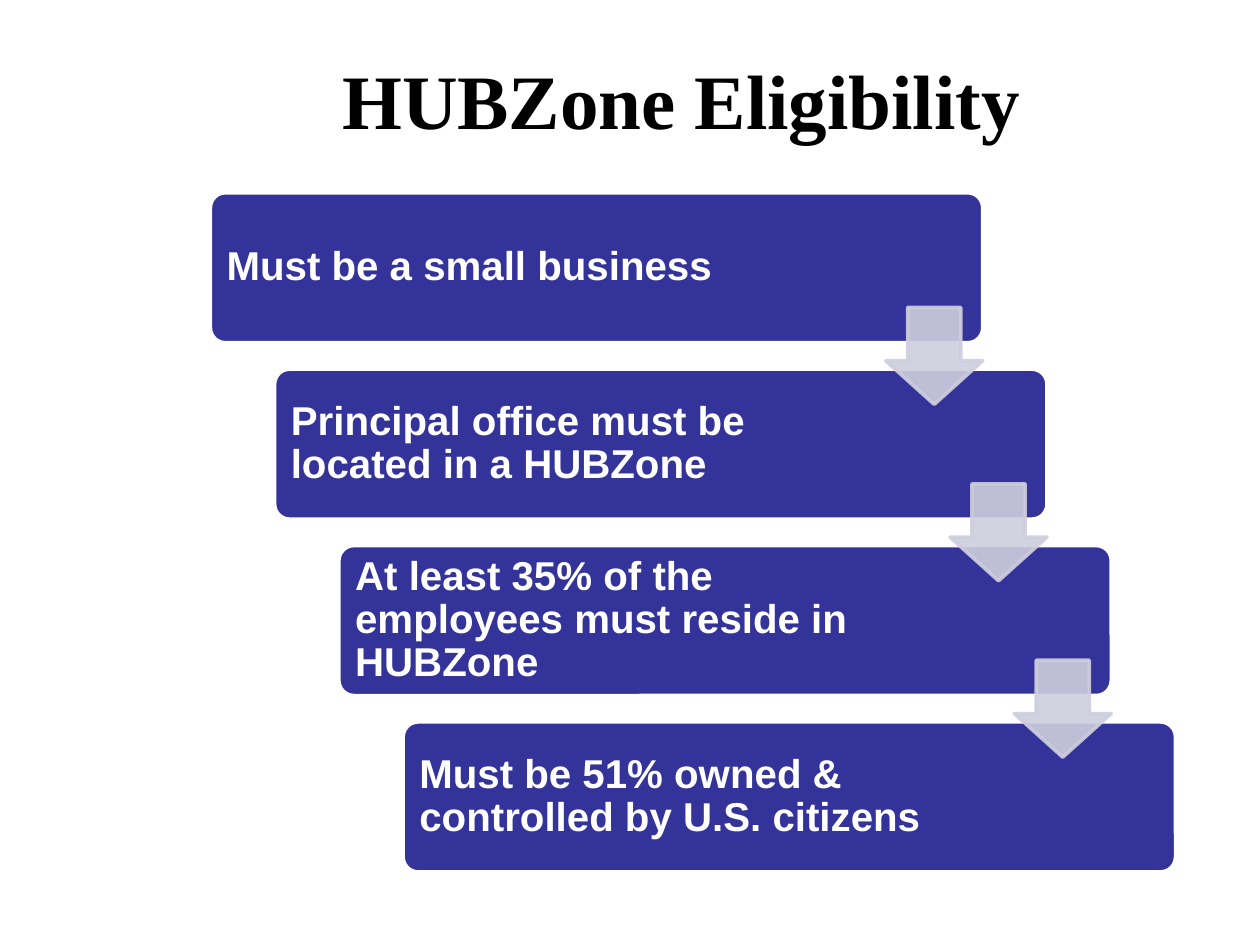
from dataclasses import dataclass

import pptx
import pptx.dml.color
import pptx.enum.shapes
import pptx.enum.text
import pptx.oxml.ns
import pptx.shapes.autoshape
import pptx.slide
import pptx.util
from lxml import etree

Inches = pptx.util.Inches
Pt = pptx.util.Pt
RGBColor = pptx.dml.color.RGBColor
MSO_SHAPE = pptx.enum.shapes.MSO_SHAPE
MSO_ANCHOR = pptx.enum.text.MSO_ANCHOR
PP_ALIGN = pptx.enum.text.PP_ALIGN

BLACK = RGBColor(0x00, 0x00, 0x00)
WHITE = RGBColor(0xFF, 0xFF, 0xFF)
INDIGO = RGBColor(0x33, 0x33, 0x99)
LAVENDER = RGBColor(0xCE, 0xCE, 0xDE)

STEP_X, STEP_Y = 0.51, 1.4
CARD_WIDTH, CARD_HEIGHT = 6.13, 1.19
LABEL_WIDTH, LABEL_INSET = 4.78, 0.03
ARROW_SIZE = 0.77
ARROW_OPACITY = 90


@dataclass(frozen=True)
class Requirement:
    text: str
    left: float
    top: float


REQUIREMENTS = [
    Requirement(text, 1.67 + index * STEP_X, 1.53 + index * STEP_Y)
    for index, text in enumerate([
        "Must be a small business",
        "Principal office must be located in a HUBZone",
        "At least 35% of the employees must reside in HUBZone",
        "Must be 51% owned & controlled by U.S. citizens",
    ])
]


def add_title(slide: pptx.slide.Slide, text: str) -> None:
    title = slide.shapes.title
    title.left, title.top = Inches(0.08), Inches(0.38)
    title.width, title.height = Inches(9.83), Inches(0.95)
    frame = title.text_frame
    frame.vertical_anchor = MSO_ANCHOR.MIDDLE
    frame.margin_left = Inches(0.93)  # shifts the centred title to the right
    frame.margin_right = Inches(0.1)
    frame.margin_top = frame.margin_bottom = Inches(0.05)
    paragraph = frame.paragraphs[0]
    paragraph.alignment = PP_ALIGN.CENTER
    paragraph.line_spacing = 0.8
    run = paragraph.add_run()
    run.text = text
    run.font.name = "Times New Roman"
    run.font.size = Pt(44)
    run.font.bold = True
    run.font.color.rgb = BLACK


def style_shape(shape: pptx.shapes.autoshape.Shape, fill: RGBColor, line: RGBColor) -> None:
    shape.shadow.inherit = False
    shape.fill.solid()
    shape.fill.fore_color.rgb = fill
    shape.line.color.rgb = line
    shape.line.width = Pt(2)


def add_card(slide: pptx.slide.Slide, requirement: Requirement) -> None:
    card = slide.shapes.add_shape(
        MSO_SHAPE.ROUNDED_RECTANGLE, Inches(requirement.left), Inches(requirement.top),
        Inches(CARD_WIDTH), Inches(CARD_HEIGHT))
    card.adjustments[0] = 0.1
    style_shape(card, INDIGO, WHITE)

    label = slide.shapes.add_textbox(
        Inches(requirement.left + LABEL_INSET), Inches(requirement.top + LABEL_INSET),
        Inches(LABEL_WIDTH), Inches(CARD_HEIGHT - 2 * LABEL_INSET))
    frame = label.text_frame
    frame.word_wrap = True
    frame.vertical_anchor = MSO_ANCHOR.MIDDLE
    frame.margin_left = frame.margin_right = Inches(0.1)
    frame.margin_top = frame.margin_bottom = Inches(0.1)
    paragraph = frame.paragraphs[0]
    paragraph.line_spacing = 0.9
    run = paragraph.add_run()
    run.text = requirement.text
    run.font.name = "Arial"
    run.font.size = Pt(23)
    run.font.bold = True
    run.font.color.rgb = WHITE


def add_arrow(slide: pptx.slide.Slide, requirement: Requirement) -> None:
    """Add the translucent arrow leading from a card to the next one."""
    arrow = slide.shapes.add_shape(
        MSO_SHAPE.DOWN_ARROW,
        Inches(requirement.left + CARD_WIDTH - ARROW_SIZE), Inches(requirement.top + 0.91),
        Inches(ARROW_SIZE), Inches(ARROW_SIZE))
    arrow.adjustments[0], arrow.adjustments[1] = 0.55, 0.45
    style_shape(arrow, LAVENDER, LAVENDER)
    qualified_name = pptx.oxml.ns.qn
    for color in arrow.element.spPr.iter(qualified_name("a:srgbClr")):
        alpha = etree.SubElement(color, qualified_name("a:alpha"))
        alpha.set("val", str(ARROW_OPACITY * 1000))


def main() -> None:
    presentation = pptx.Presentation()
    presentation.slide_width, presentation.slide_height = Inches(10), Inches(7.5)
    slide = presentation.slides.add_slide(presentation.slide_layouts[5])
    add_title(slide, "HUBZone Eligibility")
    for requirement in REQUIREMENTS:
        add_card(slide, requirement)
    for requirement in REQUIREMENTS[:-1]:
        add_arrow(slide, requirement)
    presentation.save("out.pptx")


if __name__ == "__main__":
    main()
